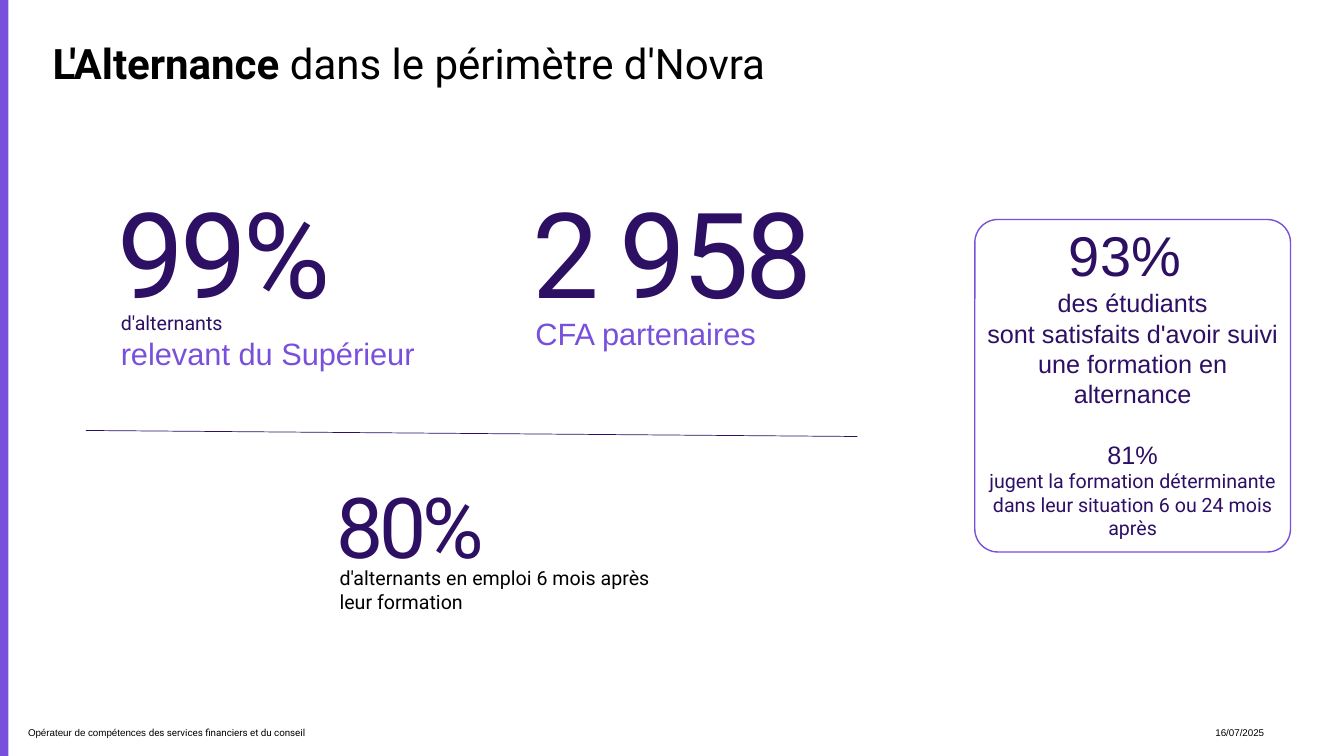
from dataclasses import dataclass

from lxml import etree
from pptx import Presentation
from pptx.dml.color import RGBColor
from pptx.enum.shapes import MSO_CONNECTOR, MSO_SHAPE
from pptx.enum.text import MSO_ANCHOR, MSO_AUTO_SIZE, PP_ALIGN
from pptx.oxml.ns import qn
from pptx.util import Pt

TOP, MIDDLE = MSO_ANCHOR.TOP, MSO_ANCHOR.MIDDLE
LEFT, CENTER, RIGHT = PP_ALIGN.LEFT, PP_ALIGN.CENTER, PP_ALIGN.RIGHT
RECTANGLE, ROUNDED = MSO_SHAPE.RECTANGLE, MSO_SHAPE.ROUNDED_RECTANGLE
STRAIGHT = MSO_CONNECTOR.STRAIGHT
NO_FIT = MSO_AUTO_SIZE.NONE


@dataclass(frozen=True)
class Theme:
    dark: RGBColor = RGBColor(0x2D, 0x0F, 0x64)
    violet: RGBColor = RGBColor(0x78, 0x50, 0xDC)
    black: RGBColor = RGBColor(0, 0, 0)
    heading: str = "Roboto"
    body: str = "Arial"
    huge: int = 85
    large: int = 60
    panel: int = 40
    title: int = 30
    label: int = 22
    text: int = 18
    small: int = 14
    footer: int = 7


THEME = Theme()


@dataclass(frozen=True)
class Span:
    text: str
    size: int
    color: RGBColor = THEME.dark
    font: str = THEME.heading
    bold: bool = False
    tracking: int = 0


def write(shape, paragraphs, anchor=TOP, align=LEFT, insets=(0, 0, 0, 0)):
    """Fill a shape with paragraphs of spans; "\\n" ends a line within one."""
    frame = shape.text_frame
    frame.word_wrap = True
    frame.auto_size = NO_FIT
    frame.vertical_anchor = anchor
    (frame.margin_left, frame.margin_top,
     frame.margin_right, frame.margin_bottom) = map(Pt, insets)
    for index, spans in enumerate(paragraphs):
        para = frame.add_paragraph() if index else frame.paragraphs[0]
        para.alignment = align
        for span in spans:
            run = para.add_run()
            run.text = span.text.rstrip("\n")
            font = run.font
            font.name = span.font
            font.size = Pt(span.size)
            font.bold = span.bold
            font.color.rgb = span.color
            if span.tracking:
                run._r.get_or_add_rPr().set("spc", str(span.tracking * 100))
            if span.text.endswith("\n"):
                para.add_line_break()
    return frame


def place(shape, left, top, width, height):
    shape.left, shape.top = Pt(left), Pt(top)
    shape.width, shape.height = Pt(width), Pt(height)


def add_text(page, bounds, paragraphs, **layout):
    box = page.shapes.add_textbox(*map(Pt, bounds))
    write(box, paragraphs, **layout)


def add_title(page):
    title = page.shapes.title
    place(title, 37.5, 26.5, 646, 36)
    write(title, [[
        Span("L'Alternance", THEME.title, THEME.black, bold=True),
        Span(" dans le périmètre d'Novra", THEME.title, THEME.black),
    ]], anchor=MIDDLE)


def add_figure(page, bounds, value, size):
    add_text(page, bounds, [[Span(value, size, tracking=-3)]], anchor=MIDDLE)


def add_side_bar(page):
    bar = page.shapes.add_shape(RECTANGLE, 0, 0, Pt(6), Pt(540))
    bar.shadow.inherit = False
    bar.fill.solid()
    bar.fill.fore_color.rgb = THEME.violet
    bar.line.fill.background()


def add_divider(page):
    ends = map(Pt, (612.5, 311.8, 61.3, 307.5))
    divider = page.shapes.add_connector(STRAIGHT, *ends)
    divider.line.color.rgb = THEME.dark
    divider.line.width = Pt(0.5)
    etree.SubElement(divider._element.spPr, qn("a:effectLst"))


def add_satisfaction_panel(page):
    panel = page.shapes.add_shape(ROUNDED, Pt(696.3), Pt(156.8), Pt(225.5), Pt(237.5))
    panel.adjustments[0] = 0.073
    panel.shadow.inherit = False
    panel.fill.background()
    panel.line.color.rgb = THEME.violet
    panel.line.width = Pt(1)
    frame = write(panel, [
        [Span("93% \n", THEME.panel, font=THEME.body),
         Span("des étudiants", THEME.text, font=THEME.body)],
        [Span("sont satisfaits d'avoir suivi une formation en alternance",
              THEME.text, font=THEME.body)],
        [Span("81%\n", THEME.text, font=THEME.body),
         Span("jugent la formation déterminante dans leur situation 6 ou 24 mois après",
              THEME.small)],
    ], anchor=MIDDLE, align=CENTER, insets=(0, 6, 0, 14))
    frame.paragraphs[-1].space_before = Pt(21.5)


def add_footer(page):
    add_text(page, (6, 511, 505, 24), [[
        Span("Opérateur de compétences ", THEME.footer, THEME.black, THEME.body),
        Span("des services financiers et du conseil", THEME.footer, THEME.black),
    ]], anchor=MIDDLE, insets=(14, 0, 0, 0))
    add_text(page, (831, 511, 72, 24), [[
        Span("16/07/2025", THEME.footer, THEME.black, THEME.body),
    ]], anchor=MIDDLE, align=RIGHT, insets=(14, 0, 0, 0))


def main():
    deck = Presentation()
    deck.slide_width, deck.slide_height = Pt(960), Pt(540)
    page = deck.slides.add_slide(deck.slide_layouts[5])

    add_side_bar(page)
    add_title(page)

    add_figure(page, (84.2, 127.5, 337, 103), "99%", THEME.huge)
    add_text(page, (86.3, 222, 241, 44), [
        [Span("d'alternants", THEME.small)],
        [Span("relevant du Supérieur", THEME.label, THEME.violet, THEME.body)],
    ])

    add_figure(page, (380, 127.5, 337, 103), "2 958", THEME.huge)
    add_text(page, (382.5, 225, 194, 27), [
        [Span("CFA partenaires", THEME.label, THEME.violet, THEME.body)],
    ])

    add_divider(page)

    add_figure(page, (240.5, 338.5, 240.5, 73), "80%", THEME.large)
    add_text(page, (242.5, 404.5, 225.5, 34), [
        [Span("d'alternants en emploi 6 mois après leur formation",
              THEME.small, THEME.black)],
    ])

    add_satisfaction_panel(page)
    add_footer(page)
    deck.save("out.pptx")


if __name__ == "__main__":
    main()
